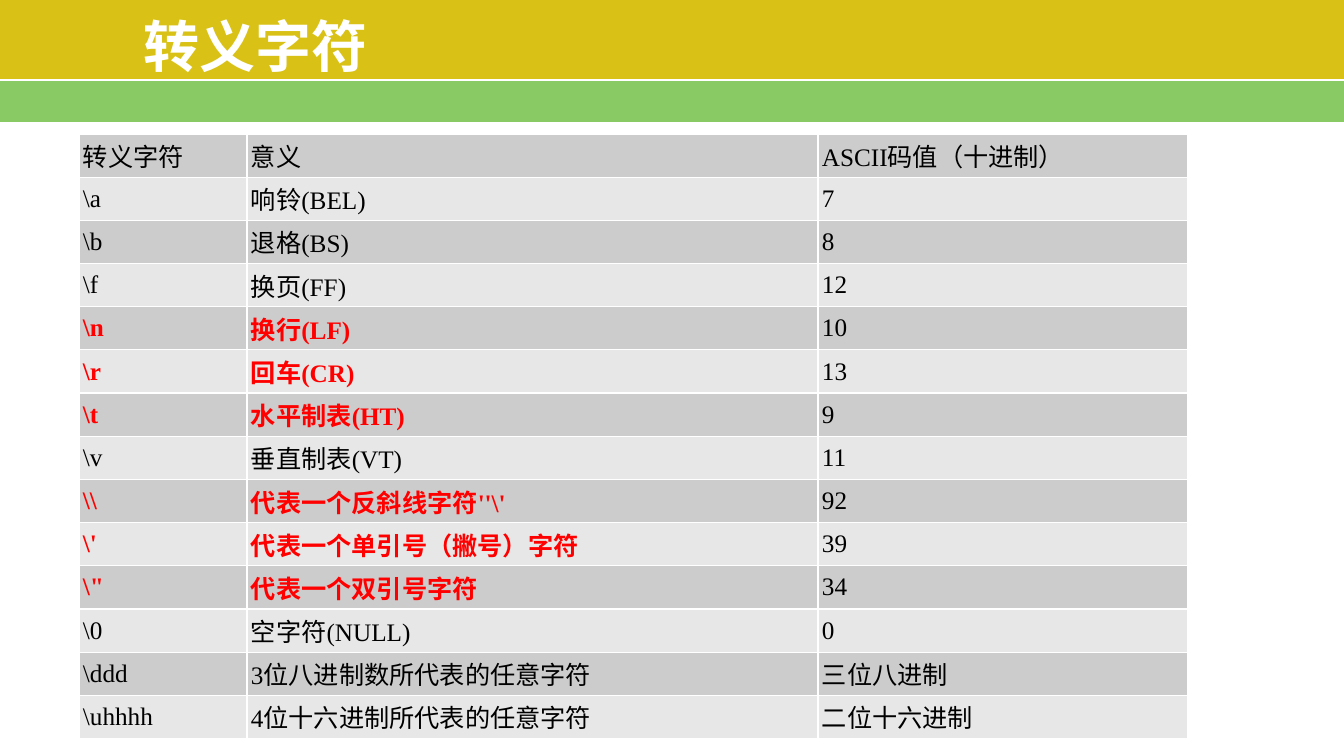
import pptx
import pptx.dml.color
import pptx.enum.shapes
import pptx.enum.text
import pptx.oxml.ns
import pptx.util
from lxml import etree

# Content
TITLE = "转义字符"
HEADINGS = ("转义字符", "意义", "ASCII码值（十进制）")
ESCAPES = [
    ("\\a", "响铃(BEL)", "7"),
    ("\\b", "退格(BS)", "8"),
    ("\\f", "换页(FF)", "12"),
    ("\\n", "换行(LF)", "10"),
    ("\\r", "回车(CR)", "13"),
    ("\\t", "水平制表(HT)", "9"),
    ("\\v", "垂直制表(VT)", "11"),
    ("\\\\", "代表一个反斜线字符''\\'", "92"),
    ("\\'", "代表一个单引号（撇号）字符", "39"),
    ("\\\"", "代表一个双引号字符", "34"),
    ("\\0", "空字符(NULL)", "0"),
    ("\\ddd", "3位八进制数所代表的任意字符", "三位八进制"),
    ("\\uhhhh", "4位十六进制所代表的任意字符", "二位十六进制"),
]
KEY_ESCAPES = {"\\n", "\\r", "\\t", "\\\\", "\\'", "\\\""}

# Look
WHITE = pptx.dml.color.RGBColor(0xFF, 0xFF, 0xFF)
BLACK = pptx.dml.color.RGBColor(0x00, 0x00, 0x00)
RED = pptx.dml.color.RGBColor(0xFF, 0x00, 0x00)
GOLD = pptx.dml.color.RGBColor(0xD9, 0xC2, 0x15)
GREEN = pptx.dml.color.RGBColor(0x89, 0xCA, 0x64)
BANDS = (pptx.dml.color.RGBColor(0xCC, 0xCC, 0xCC),
         pptx.dml.color.RGBColor(0xE7, 0xE7, 0xE7))
CJK_FONT = "Noto Sans CJK SC"
LATIN_FONT = "Times New Roman"

# Layout in px
SLIDE_W, SLIDE_H = 1344, 756
GOLD_H, GREEN_H, RULE_Y = 80, 42, 80
TITLE_BOX = (134, 19, 1041, 53)
TABLE_X, TABLE_Y, TABLE_H = 79, 134, 605
COLUMNS = (168, 571, 370)
CELL_PAD_X, CELL_PAD_Y = 4, 3


def px(length):
    return pptx.util.Emu(round(length * 914400 / 100.8))


def add_text(frame, text, size, latin, color, bold):
    run = frame.paragraphs[0].add_run()
    run.text = text
    run.font.size = pptx.util.Pt(size)
    run.font.name = latin
    run.font.bold = bold
    run.font.color.rgb = color
    east_asian = etree.SubElement(run.font._element, pptx.oxml.ns.qn("a:ea"))
    east_asian.set("typeface", CJK_FONT)


def add_band(slide, top, height, color):
    band = slide.shapes.add_shape(pptx.enum.shapes.MSO_SHAPE.RECTANGLE,
                                  0, px(top), px(SLIDE_W), px(height))
    band.shadow.inherit = False
    band.fill.solid()
    band.fill.fore_color.rgb = color
    band.line.fill.background()


def add_borders(cell):
    properties = cell._tc.get_or_add_tcPr()
    for side in ("lnL", "lnR", "lnT", "lnB"):
        border = etree.SubElement(properties, pptx.oxml.ns.qn("a:" + side))
        border.set("w", str(pptx.util.Pt(1)))
        fill = etree.SubElement(border, pptx.oxml.ns.qn("a:solidFill"))
        etree.SubElement(fill, pptx.oxml.ns.qn("a:srgbClr")).set("val", str(WHITE))


def add_header(slide):
    add_band(slide, GOLD_H, GREEN_H, GREEN)
    add_band(slide, 0, GOLD_H, GOLD)
    rule = slide.shapes.add_connector(pptx.enum.shapes.MSO_CONNECTOR.STRAIGHT,
                                      0, px(RULE_Y), px(SLIDE_W), px(RULE_Y))
    rule.line.color.rgb = WHITE
    rule.line.width = pptx.util.Pt(1)
    etree.SubElement(rule._element.spPr, pptx.oxml.ns.qn("a:effectLst"))

    title = slide.shapes.add_textbox(*map(px, TITLE_BOX)).text_frame
    title.word_wrap = True
    title.vertical_anchor = pptx.enum.text.MSO_ANCHOR.MIDDLE
    add_text(title, TITLE, 40, CJK_FONT, WHITE, True)


def add_escape_table(slide):
    rows = [HEADINGS] + ESCAPES
    table = slide.shapes.add_table(len(rows), len(COLUMNS), px(TABLE_X), px(TABLE_Y),
                                   px(sum(COLUMNS)), px(TABLE_H)).table
    table.first_row = table.horz_banding = False
    for column, width in zip(table.columns, COLUMNS):
        column.width = px(width)
    for r, row in enumerate(rows):
        table.rows[r].height = px(TABLE_H / len(rows))
        for c, text in enumerate(row):
            cell = table.cell(r, c)
            cell.margin_left = cell.margin_right = px(CELL_PAD_X)
            cell.margin_top = cell.margin_bottom = px(CELL_PAD_Y)
            cell.vertical_anchor = pptx.enum.text.MSO_ANCHOR.MIDDLE
            add_borders(cell)
            cell.fill.solid()
            cell.fill.fore_color.rgb = BANDS[r % 2]
            # Key escapes stand out in their first two columns
            key = row[0] in KEY_ESCAPES and c < 2
            add_text(cell.text_frame, text, 18, LATIN_FONT, RED if key else BLACK, key)


def main():
    deck = pptx.Presentation()
    deck.slide_width, deck.slide_height = px(SLIDE_W), px(SLIDE_H)
    slide = deck.slides.add_slide(deck.slide_layouts[6])
    add_header(slide)
    add_escape_table(slide)
    deck.save("out.pptx")


if __name__ == "__main__":
    main()
